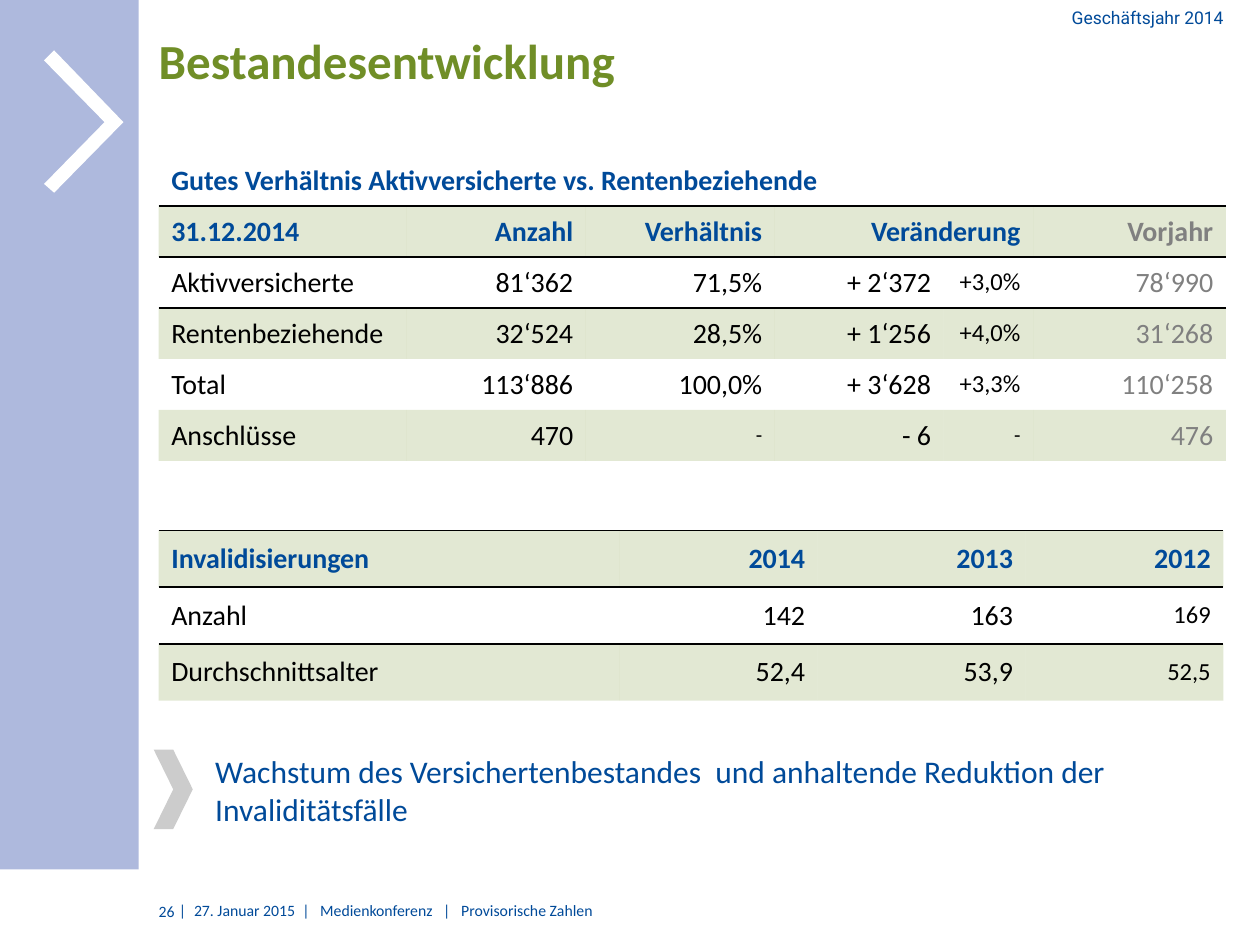
"""Build the slide on the development of insured members and pensioners."""
import pptx
import pptx.dml.color
import pptx.enum.shapes
import pptx.enum.text
import pptx.oxml.ns
import pptx.util
from lxml import etree
from pptx.util import Inches

BLUE = pptx.dml.color.RGBColor(0x00, 0x4A, 0x99)
GREEN = pptx.dml.color.RGBColor(0x70, 0x8E, 0x27)
GREY = pptx.dml.color.RGBColor(0x80, 0x80, 0x80)
LIGHT_GREY = pptx.dml.color.RGBColor(0xCC, 0xCC, 0xCC)
LAVENDER = pptx.dml.color.RGBColor(0xAE, 0xB9, 0xDD)
BLACK = pptx.dml.color.RGBColor(0x00, 0x00, 0x00)
WHITE = pptx.dml.color.RGBColor(0xFF, 0xFF, 0xFF)

ALIGN = pptx.enum.text.PP_ALIGN
ANCHOR = pptx.enum.text.MSO_ANCHOR
SHAPE = pptx.enum.shapes.MSO_SHAPE
NO_STYLE = "{2D5ABB26-0587-4C30-8999-92F81FD0307C}"
LEFT, WIDTH = 1.26, 8.47
BORDERS = {0: ["a:lnB"], 1: ["a:lnT", "a:lnB"], 2: ["a:lnT"]}


def format_text(text_frame, text, color, alignment=ALIGN.LEFT, **font_format):
    text_frame.text = text
    paragraph = text_frame.paragraphs[0]
    paragraph.alignment = alignment
    font_values = {"name": "Calibri", "bold": False, **font_format}
    for name, value in font_values.items():
        setattr(paragraph.font, name, value)
    paragraph.font.color.rgb = color


def add_banded_table(slide, top, height, column_widths, rows, small_column, grey_column=None):
    qn = pptx.oxml.ns.qn
    frame = slide.shapes.add_table(
        len(rows), len(column_widths), Inches(LEFT), Inches(top), Inches(WIDTH), Inches(height)
    )
    table = frame.table
    table.first_row = False
    table.horz_banding = False
    table._tbl.tblPr.find(qn("a:tableStyleId")).text = NO_STYLE
    for column, width in zip(table.columns, column_widths):
        column.width = Inches(width)

    for row_index, row in enumerate(rows):
        heading = row_index < 2
        for column_index in range(len(column_widths)):
            cell = table.cell(row_index, column_index)
            cell.vertical_anchor = ANCHOR.MIDDLE
            properties = cell._tc.get_or_add_tcPr()
            for tag in BORDERS.get(row_index, []):
                line = etree.SubElement(properties, qn(tag), w=str(pptx.util.Pt(1)))
                line_fill = etree.SubElement(line, qn("a:solidFill"))
                etree.SubElement(line_fill, qn("a:srgbClr"), val=str(BLACK))
            if row_index % 2:
                cell.fill.solid()
                cell.fill.fore_color.rgb = GREEN
                color_element = properties.find(".//" + qn("a:solidFill") + "/" + qn("a:srgbClr"))
                for color_element in properties.findall(qn("a:solidFill") + "/" + qn("a:srgbClr")):
                    etree.SubElement(color_element, qn("a:alpha"), val="20000")
            else:
                cell.fill.background()

            text = row[column_index] if column_index < len(row) else ""
            if not text:
                continue
            color = BLUE if heading else BLACK
            if column_index == grey_column:
                color = GREY
            size = 14 if column_index == small_column and not heading else 16
            if text == "-":
                size = 12
            alignment = ALIGN.RIGHT if column_index else ALIGN.LEFT
            format_text(cell.text_frame, text, color, alignment,
                        size=pptx.util.Pt(size), bold=heading)
    table.cell(0, 0).merge(table.cell(0, len(column_widths) - 1))
    return table


presentation = pptx.Presentation()
presentation.slide_width = Inches(10)
presentation.slide_height = Inches(7.5)
slide = presentation.slides.add_slide(presentation.slide_layouts[5])

side_band = slide.shapes.add_shape(SHAPE.RECTANGLE, 0, 0, Inches(1.1), Inches(6.9))
arrow_points = [(0.43, 0.4), (0.35, 0.48), (0.83, 0.97), (0.35, 1.46), (0.43, 1.53), (0.98, 0.97)]
arrow_points = [(Inches(x), Inches(y)) for x, y in arrow_points]
builder = slide.shapes.build_freeform(*arrow_points[0])
builder.add_line_segments(arrow_points[1:], close=True)
side_arrow = builder.convert_to_shape()
message_chevron = slide.shapes.add_shape(
    SHAPE.CHEVRON, Inches(1.22), Inches(5.95), Inches(0.31), Inches(0.63)
)
for shape, color in [(side_band, LAVENDER), (side_arrow, WHITE), (message_chevron, LIGHT_GREY)]:
    shape.shadow.inherit = False
    shape.fill.solid()
    shape.fill.fore_color.rgb = color
    shape.line.fill.background()

title = slide.shapes.title
title_format = {"left": LEFT, "top": 0.24, "width": WIDTH, "height": 0.92}
for name, value in title_format.items():
    setattr(title, name, Inches(value))
format_text(title.text_frame, "Bestandesentwicklung", GREEN, size=pptx.util.Pt(28), bold=True)
title.text_frame.vertical_anchor = ANCHOR.TOP
title.text_frame.word_wrap = True
title.text_frame.auto_size = pptx.enum.text.MSO_AUTO_SIZE.NONE

members_table = add_banded_table(
    slide, 1.23, 2.43, [1.97, 1.42, 1.5, 1.34, 0.71, 1.53],
    [
        ["Gutes Verhältnis Aktivversicherte vs. Rentenbeziehende"],
        ["31.12.2014", "Anzahl", "Verhältnis", "Veränderung", "", "Vorjahr"],
        ["Aktivversicherte", "81‘362", "71,5%", "+ 2‘372", "+3,0%", "78‘990"],
        ["Rentenbeziehende", "32‘524", "28,5%", "+ 1‘256", "+4,0%", "31‘268"],
        ["Total", "113‘886", "100,0%", "+ 3‘628", "+3,3%", "110‘258"],
        ["Anschlüsse", "470", "-", "- 6", "-", "476"],
    ],
    small_column=4, grey_column=5,
)
members_table.cell(1, 3).merge(members_table.cell(1, 4))

add_banded_table(
    slide, 3.76, 1.8, [3.66, 1.57, 1.65, 1.57],
    [
        [],
        ["Invalidisierungen", "2014", "2013", "2012"],
        ["Anzahl", "142", "163", "169"],
        ["Durchschnittsalter", "52,4", "53,9", "52,5"],
    ],
    small_column=3,
)

message = slide.shapes.add_textbox(Inches(1.61), Inches(5.92), Inches(8.35), Inches(0.71))
message.text_frame.word_wrap = True
format_text(
    message.text_frame,
    "Wachstum des Versichertenbestandes  und anhaltende Reduktion der Invaliditätsfälle",
    BLUE, size=pptx.util.Pt(18),
)

small_texts = [
    ("Geschäftsjahr 2014", 7.44, 0.08, 2.27, 0.14, ALIGN.RIGHT, ANCHOR.BOTTOM, "Roboto", 10),
    ("26", LEFT, 7.16, 0.16, 0.19, ALIGN.LEFT, ANCHOR.TOP, "Calibri", 9),
    ("|", 1.42, 7.15, 0.11, 0.21, ALIGN.LEFT, ANCHOR.TOP, "Calibri", 9),
    ("27. Januar 2015  |   Medienkonferenz   |   Provisorische Zahlen",
     1.54, 7.15, 6.77, 0.21, ALIGN.LEFT, ANCHOR.TOP, "Calibri", 9),
]
for text, left, top, width, height, alignment, anchor, font_name, size in small_texts:
    box = slide.shapes.add_textbox(Inches(left), Inches(top), Inches(width), Inches(height))
    box.text_frame.word_wrap = True
    box.text_frame.vertical_anchor = anchor
    format_text(box.text_frame, text, BLUE, alignment, name=font_name, size=pptx.util.Pt(size))
    small_texts_frame = box.text_frame
    for side in ("left", "top", "right", "bottom"):
        setattr(small_texts_frame, f"margin_{side}", 0)

for side in ("left", "top", "right", "bottom"):
    setattr(title.text_frame, f"margin_{side}", 0)

presentation.save("out.pptx")
